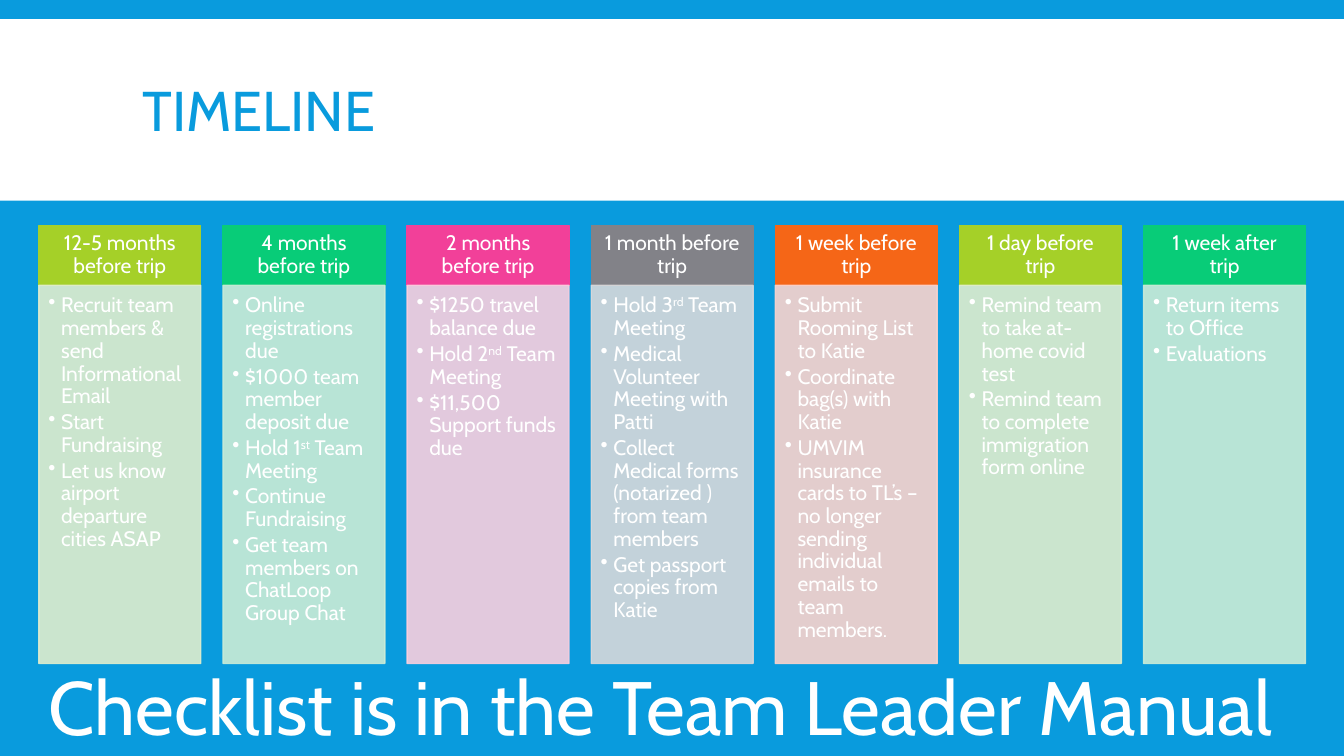
from dataclasses import dataclass

from lxml import etree
from pptx import Presentation
from pptx.dml.color import RGBColor
from pptx.enum.shapes import MSO_SHAPE
from pptx.enum.text import MSO_ANCHOR, PP_ALIGN
from pptx.oxml.ns import qn
from pptx.util import Cm, Pt

RECTANGLE = MSO_SHAPE.RECTANGLE
TOP, MIDDLE = MSO_ANCHOR.TOP, MSO_ANCHOR.MIDDLE
LEFT, CENTER = PP_ALIGN.LEFT, PP_ALIGN.CENTER


@dataclass(frozen=True)
class Theme:
    font: str = "Cabin"
    blue: str = "099BDD"
    white: str = "FFFFFF"
    accents: tuple = (
        ("A5D028", "E1EECD"),
        ("08CC78", "CCECD6"),
        ("F24099", "FACFDE"),
        ("828288", "D8D8DA"),
        ("F56617", "FBD3CC"),
    )
    title_size: float = 40
    stage_size: float = 15
    footer_size: float = 54


STAGES = [
    ("12-5 months before trip", [
        "Recruit team members & send Informational Email",
        "Start Fundraising",
        "Let us know airport departure cities ASAP",
    ]),
    ("4 months before trip", [
        "Online registrations due",
        "$1000 team member deposit due",
        "Hold 1^st^ Team Meeting",
        "Continue Fundraising",
        "Get team members on ChatLoop Group Chat",
    ]),
    ("2 months before trip", [
        "$1250 travel balance due",
        "Hold 2^nd^ Team Meeting",
        "$11,500 Support funds due",
    ]),
    ("1 month before trip", [
        "Hold 3^rd^ Team Meeting",
        "Medical Volunteer Meeting with Patti",
        "Collect Medical forms (notarized ) from team members",
        "Get passport copies from Katie",
    ]),
    ("1 week before trip", [
        "Submit Rooming List to Katie",
        "Coordinate bag(s) with Katie",
        "UMVIM insurance cards to TL’s – no longer sending individual emails to team members.",
    ]),
    ("1 day before trip", [
        "Remind team to take at-home covid test",
        "Remind team to complete immigration form online",
    ]),
    ("1 week after trip", [
        "Return items to Office",
        "Evaluations",
    ]),
]

COLUMN_LEFT, COLUMN_STEP, COLUMN_WIDTH = 0.98, 4.64, 4.08
HEADER_TOP, HEADER_HEIGHT, TASKS_HEIGHT = 5.68, 1.51, 9.53


class SlideBuilder:
    def __init__(self, page, theme):
        self.page = page
        self.theme = theme
        page.background.fill.solid()
        page.background.fill.fore_color.rgb = RGBColor.from_string(theme.blue)

    def rectangle(self, left, top, width, height, color, outlined=True, opacity=100):
        box = self.page.shapes.add_shape(
            RECTANGLE, Cm(left), Cm(top), Cm(width), Cm(height))
        box.shadow.inherit = False
        box.fill.solid()
        box.fill.fore_color.rgb = RGBColor.from_string(color)
        if outlined:
            box.line.color.rgb = RGBColor.from_string(color)
            box.line.width = Pt(1)
        else:
            box.line.fill.background()
        if opacity < 100:
            for paint in box._element.spPr.iter(qn("a:srgbClr")):
                etree.SubElement(paint, qn("a:alpha"), val=str(opacity * 1000))
        return box

    def frame(self, box, anchor, margins=(0.25, 0.13, 0.25, 0.13), wrap=True):
        frame = box.text_frame
        frame.word_wrap = wrap
        frame.vertical_anchor = anchor
        (frame.margin_left, frame.margin_top,
         frame.margin_right, frame.margin_bottom) = map(Cm, margins)
        return frame

    def add_text(self, para, text, size, color, align=LEFT, spacing=1.0, after=0):
        para.alignment = align
        para.line_spacing = spacing
        para.space_after = Pt(after)
        for index, part in enumerate(text.split("^")):
            span = para.add_run()
            span.text = part
            span.font.name = self.theme.font
            span.font.size = Pt(size)
            span.font.color.rgb = RGBColor.from_string(color)
            if index % 2:
                span._r.get_or_add_rPr().set("baseline", "30000")

    def label(self, text, left, top, width, height, size, color, anchor, spacing, wrap):
        box = self.page.shapes.add_textbox(Cm(left), Cm(top), Cm(width), Cm(height))
        frame = self.frame(box, anchor, wrap=wrap)
        self.add_text(frame.paragraphs[0], text, size, color, spacing=spacing)

    def header(self, text, left, color):
        box = self.rectangle(left, HEADER_TOP, COLUMN_WIDTH, HEADER_HEIGHT, color)
        frame = self.frame(box, MIDDLE, (0.32, 0.18, 0.32, 0.18))
        self.add_text(frame.paragraphs[0], text, self.theme.stage_size,
                      self.theme.white, CENTER, 0.9)

    def tasks(self, items, left, color):
        box = self.rectangle(left, HEADER_TOP + HEADER_HEIGHT, COLUMN_WIDTH,
                             TASKS_HEIGHT, color, opacity=90)
        frame = self.frame(box, TOP, (0.24, 0.24, 0.32, 0.36))
        for index, item in enumerate(items):
            para = frame.add_paragraph() if index else frame.paragraphs[0]
            properties = para._p.get_or_add_pPr()
            properties.set("marL", str(Cm(0.32)))
            properties.set("indent", str(-Cm(0.32)))
            etree.SubElement(properties, qn("a:buChar"), char="•")
            self.add_text(para, item, self.theme.stage_size, self.theme.white,
                          spacing=0.9, after=2.25)


def main():
    deck = Presentation()
    deck.slide_width, deck.slide_height = Cm(33.87), Cm(19.05)
    theme = Theme()
    builder = SlideBuilder(deck.slides.add_slide(deck.slide_layouts[6]), theme)

    builder.rectangle(0, 0.48, 33.87, 4.58, theme.white, outlined=False)
    builder.label("TIMELINE", 3.35, 0.79, 27.18, 4.19, theme.title_size,
                  theme.blue, MIDDLE, 0.85, True)
    for index, (heading, items) in enumerate(STAGES):
        left = COLUMN_LEFT + index * COLUMN_STEP
        strong, pale = theme.accents[index % len(theme.accents)]
        builder.header(heading, left, strong)
        builder.tasks(items, left, pale)
    builder.label("Checklist is in the Team Leader Manual", 0.97, 16.49, 31.52, 2.56,
                  theme.footer_size, theme.white, TOP, 1.0, False)
    deck.save("out.pptx")


if __name__ == "__main__":
    main()
